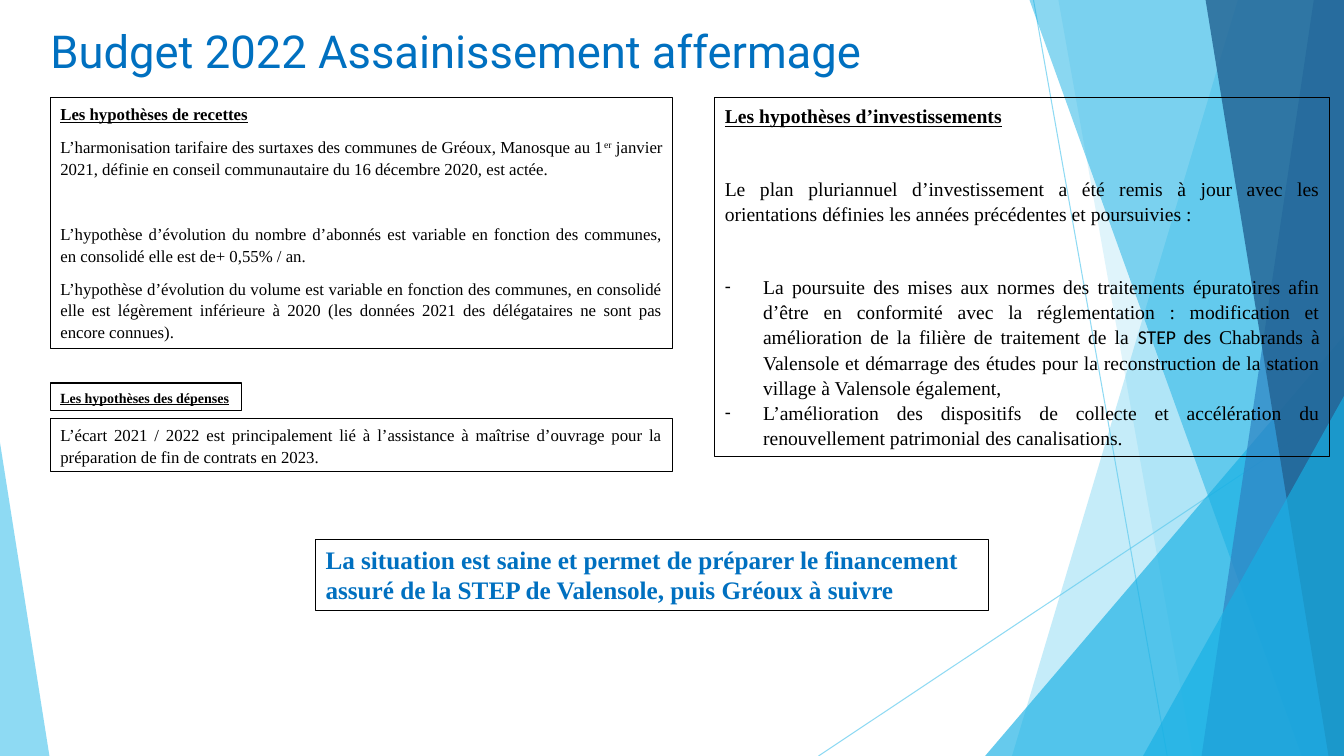
from dataclasses import dataclass

from lxml import etree
from pptx import Presentation
from pptx import util as u
from pptx.dml.color import RGBColor
from pptx.enum import shapes, text
from pptx.oxml.ns import qn


@dataclass(frozen=True)
class Theme:
    serif: str = "Times New Roman"
    sans: str = "Calibri"
    display: str = "Roboto"
    ink: str = "000000"
    accent: str = "0070C0"
    sky: str = "5FCBEF"
    cyan: str = "17B0E4"
    blue: str = "2E83C3"
    navy: str = "226292"
    title: float = 32.4
    conclusion: float = 18
    large: float = 14
    body: float = 12
    small: float = 10
    hairline: float = 0.75
    spacing: float = 1.07
    after: float = 8
    indent: float = 0.38


THEME = Theme()


@dataclass(frozen=True)
class Box:
    left: float
    top: float
    width: float
    height: float

    def point(self, x, y):
        return (u.Emu(round(self.left + self.width * x / 100)),
                u.Emu(round(self.top + self.height * y / 100)))

    def area(self, x, y, width, height):
        return Box(*self.point(x, y), round(self.width * width / 100),
                   round(self.height * height / 100))

    def bounds(self):
        return self.left, self.top, self.width, self.height


def apply(target, **values):
    for name, value in values.items():
        setattr(target, name, value)


def set_opacity(properties, percent):
    color = properties.find(".//" + qn("a:srgbClr"))
    etree.SubElement(color, qn("a:alpha"), val=str(percent * 1000))


def paint(shape, color, opacity):
    shape.shadow.inherit = False
    shape.fill.solid()
    shape.fill.fore_color.rgb = RGBColor.from_string(color)
    shape.line.fill.background()
    set_opacity(shape.element.spPr, opacity)


def add_ray(slide, box, start, end):
    ray = slide.shapes.add_connector(
        shapes.MSO_CONNECTOR.STRAIGHT, *box.point(*start), *box.point(*end))
    ray.line.color.rgb = RGBColor.from_string(THEME.sky)
    ray.line.width = u.Pt(THEME.hairline)
    set_opacity(ray.element.spPr, 70)
    etree.SubElement(ray.element.spPr, qn("a:effectLst"))


def add_band(slide, box, top_edge, bottom_edge, color, opacity):
    corners = [box.point(x, y) for x, y in
               ((top_edge, 0), (100, 0), (100, 100), (bottom_edge, 100))]
    builder = slide.shapes.build_freeform(*corners[0])
    builder.add_line_segments(corners[1:], close=True)
    paint(builder.convert_to_shape(), color, opacity)


def add_wedge(slide, box, left, top, width, apex, color, opacity):
    wedge = slide.shapes.add_shape(
        shapes.MSO_SHAPE.ISOSCELES_TRIANGLE,
        *box.area(left, top, width, 100 - top).bounds())
    wedge.adjustments[0] = apex
    paint(wedge, color, opacity)


def add_backdrop(slide, box):
    add_ray(slide, box, (76.9, 0), (86.85, 100))
    add_ray(slide, box, (100, 53.73), (60.9, 100))
    add_band(slide, box, 92.1, 75.3, THEME.sky, 36)
    add_band(slide, box, 78.75, 88.75, THEME.sky, 20)
    add_wedge(slide, box, 73.3, 44.4, 26.7, 1, THEME.cyan, 66)
    add_band(slide, box, 76.6, 96.85, THEME.cyan, 50)
    add_band(slide, box, 97.75, 89.4, THEME.blue, 70)
    add_band(slide, box, 89.7, 98.85, THEME.navy, 80)
    add_wedge(slide, box, 85.05, 52.4, 14.95, 1, THEME.cyan, 66)
    add_wedge(slide, box, 0, 58.53, 3.68, 0, THEME.sky, 70)


def add_run(paragraph, words, size, color=THEME.ink, face=THEME.serif,
            bold=False, underline=False, raised=False):
    run = paragraph.add_run()
    run.text = words
    apply(run.font, name=face, size=u.Pt(size), bold=bold, underline=underline)
    run.font.color.rgb = RGBColor.from_string(color)
    if raised:
        run._r.get_or_add_rPr().set("baseline", "30000")


def add_dash(paragraph):
    properties = paragraph._p.get_or_add_pPr()
    indent = u.Inches(THEME.indent)
    properties.set("marL", str(indent))
    properties.set("indent", str(-indent))
    etree.SubElement(properties, qn("a:buFont"), typeface=THEME.sans)
    etree.SubElement(properties, qn("a:buChar"), char="-")


def add_panel(slide, box, size, paragraphs, wrap=True):
    panel = slide.shapes.add_textbox(*box.bounds())
    panel.line.color.rgb = RGBColor.from_string(THEME.ink)
    panel.line.width = u.Pt(THEME.hairline)
    frame = panel.text_frame
    apply(frame, word_wrap=wrap, auto_size=text.MSO_AUTO_SIZE.SHAPE_TO_FIT_TEXT)
    for index, (runs, layout) in enumerate(paragraphs):
        paragraph = frame.add_paragraph() if index else frame.paragraphs[0]
        values = dict(alignment=text.PP_ALIGN.JUSTIFY, line_spacing=THEME.spacing,
                      space_after=u.Pt(layout.get("after", THEME.after)))
        apply(paragraph, **{**values, **layout.get("format", {})})
        if layout.get("dash"):
            add_dash(paragraph)
        for words, style in runs:
            add_run(paragraph, words, size, **style)


def plain(words, **layout):
    return [(words, {})], layout


def heading(words, **layout):
    return [(words, dict(bold=True, underline=True))], layout


def add_title(slide, box):
    title = slide.shapes.title
    apply(title, **dict(zip(("left", "top", "width", "height"), box.bounds())))
    apply(title.text_frame, word_wrap=True, vertical_anchor=text.MSO_ANCHOR.MIDDLE)
    paragraph = title.text_frame.paragraphs[0]
    paragraph.alignment = text.PP_ALIGN.LEFT
    add_run(paragraph, "Budget 2022 Assainissement affermage",
            THEME.title, THEME.accent, THEME.display)
    slide.shapes.element.append(title.element)


def add_operations(slide, box):
    add_panel(slide, box.area(0, 76.28, 30.79, 7.28), THEME.small,
              [heading("Les hypothèses des dépenses")], wrap=False)
    add_panel(slide, box.area(0, 0, 100, 67.12), THEME.body, [
        heading("Les hypothèses de recettes"),
        ([("L’harmonisation tarifaire des surtaxes des communes de Gréoux, Manosque au 1", {}),
          ("er", dict(raised=True)),
          (" janvier 2021, définie en conseil communautaire du 16 décembre 2020, est actée.", {})],
         dict(after=31.5)),
        plain("L’hypothèse d’évolution du nombre d’abonnés est variable en fonction des "
              "communes, en consolidé elle est de+ 0,55% / an."),
        plain("L’hypothèse d’évolution du volume est variable en fonction des communes, en "
              "consolidé elle est légèrement inférieure à 2020 (les données 2021 des "
              "délégataires ne sont pas encore connues)."),
    ])
    add_panel(slide, box.area(0, 85.71, 100, 14.29), THEME.body, [
        plain("L’écart 2021 / 2022 est principalement lié à l’assistance à maîtrise "
              "d’ouvrage pour la préparation de fin de contrats en 2023.")])


def add_investments(slide, box):
    add_panel(slide, box, THEME.large, [
        heading("Les hypothèses d’investissements", after=34),
        plain("Le plan pluriannuel d’investissement a été remis à jour avec les "
              "orientations définies les années précédentes et poursuivies :", after=34),
        ([("La poursuite des mises aux normes des traitements épuratoires afin d’être en "
           "conformité avec la réglementation : modification et amélioration de la "
           "filière de traitement de la ", {}),
          ("STEP des ", dict(face=THEME.sans)),
          ("Chabrands à Valensole et démarrage des études pour la reconstruction de la "
           "station village à Valensole également, ", {})], dict(dash=True, after=0)),
        plain("L’amélioration des dispositifs de collecte et accélération du "
              "renouvellement patrimonial des canalisations.", dash=True, after=0),
    ])


def add_conclusion(slide, box):
    add_panel(slide, box, THEME.conclusion, [
        ([("La situation est saine et permet de préparer le financement assuré de la STEP "
           "de Valensole, puis Gréoux à suivre", dict(color=THEME.accent, bold=True))],
         dict(after=0, format=dict(alignment=text.PP_ALIGN.LEFT, line_spacing=1.0)))])


def main():
    presentation = Presentation()
    apply(presentation, slide_width=u.Inches(13.33), slide_height=u.Inches(7.5))
    slide = presentation.slides.add_slide(presentation.slide_layouts[5])
    page = Box(0, 0, presentation.slide_width, presentation.slide_height)
    add_backdrop(slide, page)
    add_title(slide, page.area(3, 2.53, 70.5, 8.27))
    add_operations(slide, page.area(3.75, 12.93, 46.29, 49.47))
    add_investments(slide, page.area(53.19, 12.93, 45.76, 47.47))
    add_conclusion(slide, page.area(23.48, 71.33, 50.04, 9.47))
    presentation.save("out.pptx")


if __name__ == "__main__":
    main()
